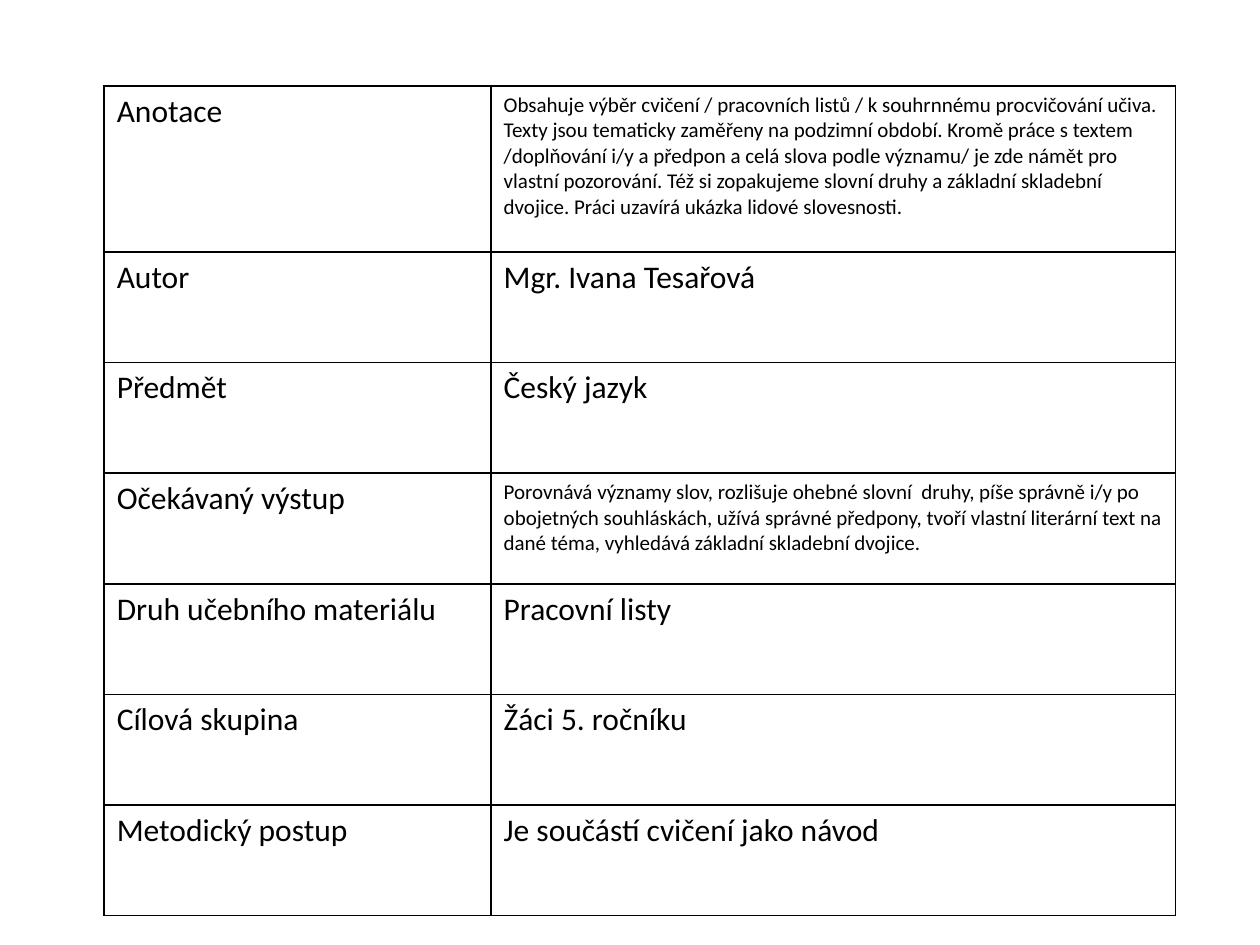
from typing import NamedTuple

import pptx
import pptx.dml.color
import pptx.oxml.ns
import pptx.util
from lxml import etree

Cm = pptx.util.Cm
Pt = pptx.util.Pt

COLOURS = {"text": "000000", "border": "000000", "cell": "FFFFFF"}
FONT = "Calibri"
LABEL_SIZE = 18
DETAIL_SIZE = 12
BORDER_WIDTH = Pt(1)
COLUMN_WIDTHS = (7.8, 13.8)
ROW_HEIGHT = 2.23


class Entry(NamedTuple):
    label: str
    paragraphs: tuple[str, ...]
    size: int = LABEL_SIZE
    height: float = ROW_HEIGHT


ENTRIES = (
    Entry(
        "Anotace",
        (
            "Obsahuje výběr cvičení / pracovních listů / k souhrnnému procvičování učiva.",
            "Texty jsou tematicky zaměřeny na podzimní období. Kromě práce s textem "
            "/doplňování i/y a předpon a celá slova podle významu/ je zde námět pro "
            "vlastní pozorování. Též si zopakujeme slovní druhy a základní skladební "
            "dvojice. Práci uzavírá ukázka lidové slovesnosti.",
        ),
        DETAIL_SIZE,
        3.35,
    ),
    Entry("Autor", ("Mgr. Ivana Tesařová",)),
    Entry("Předmět", ("Český jazyk",)),
    Entry(
        "Očekávaný výstup",
        (
            "Porovnává významy slov, rozlišuje ohebné slovní  druhy, píše správně i/y "
            "po obojetných souhláskách, užívá správné předpony, tvoří vlastní literární "
            "text na dané téma, vyhledává základní skladební dvojice.",
        ),
        DETAIL_SIZE,
    ),
    Entry("Druh učebního materiálu", ("Pracovní listy",)),
    Entry("Cílová skupina", ("Žáci 5. ročníku",)),
    Entry("Metodický postup", ("Je součástí cvičení jako návod",)),
)


def rgb(name: str) -> pptx.dml.color.RGBColor:
    return pptx.dml.color.RGBColor.from_string(COLOURS[name])


def add_borders(cell: pptx.table._Cell) -> None:
    qn = pptx.oxml.ns.qn
    properties = cell._tc.get_or_add_tcPr()
    for side in ("a:lnL", "a:lnR", "a:lnT", "a:lnB"):
        line = etree.SubElement(properties, qn(side), w=str(BORDER_WIDTH))
        fill = etree.SubElement(line, qn("a:solidFill"))
        etree.SubElement(fill, qn("a:srgbClr"), val=COLOURS["border"])


def fill_cell(cell: pptx.table._Cell, paragraphs: tuple[str, ...], size: int) -> None:
    add_borders(cell)
    cell.fill.solid()
    cell.fill.fore_color.rgb = rgb("cell")
    cell.text = "\n".join(paragraphs)
    for paragraph in cell.text_frame.paragraphs:
        paragraph.font.name = FONT
        paragraph.font.size = Pt(size)
        paragraph.font.bold = False
        paragraph.font.color.rgb = rgb("text")


def main() -> None:
    deck = pptx.Presentation()
    deck.slide_width, deck.slide_height = Cm(25.4), Cm(19.05)
    slide = deck.slides.add_slide(deck.slide_layouts[6])

    # Overview of the teaching material
    overview = slide.shapes.add_table(
        len(ENTRIES), len(COLUMN_WIDTHS), Cm(2.1), Cm(1.73),
        Cm(sum(COLUMN_WIDTHS)), Cm(sum(entry.height for entry in ENTRIES)),
    ).table
    overview.first_row = False
    overview.horz_banding = False
    for column, width in zip(overview.columns, COLUMN_WIDTHS):
        column.width = Cm(width)

    # One row per entry: label, then description
    for row, entry in zip(overview.rows, ENTRIES):
        row.height = Cm(entry.height)
        label, description = row.cells
        fill_cell(label, (entry.label,), LABEL_SIZE)
        fill_cell(description, entry.paragraphs, entry.size)

    deck.save("out.pptx")


if __name__ == "__main__":
    main()
